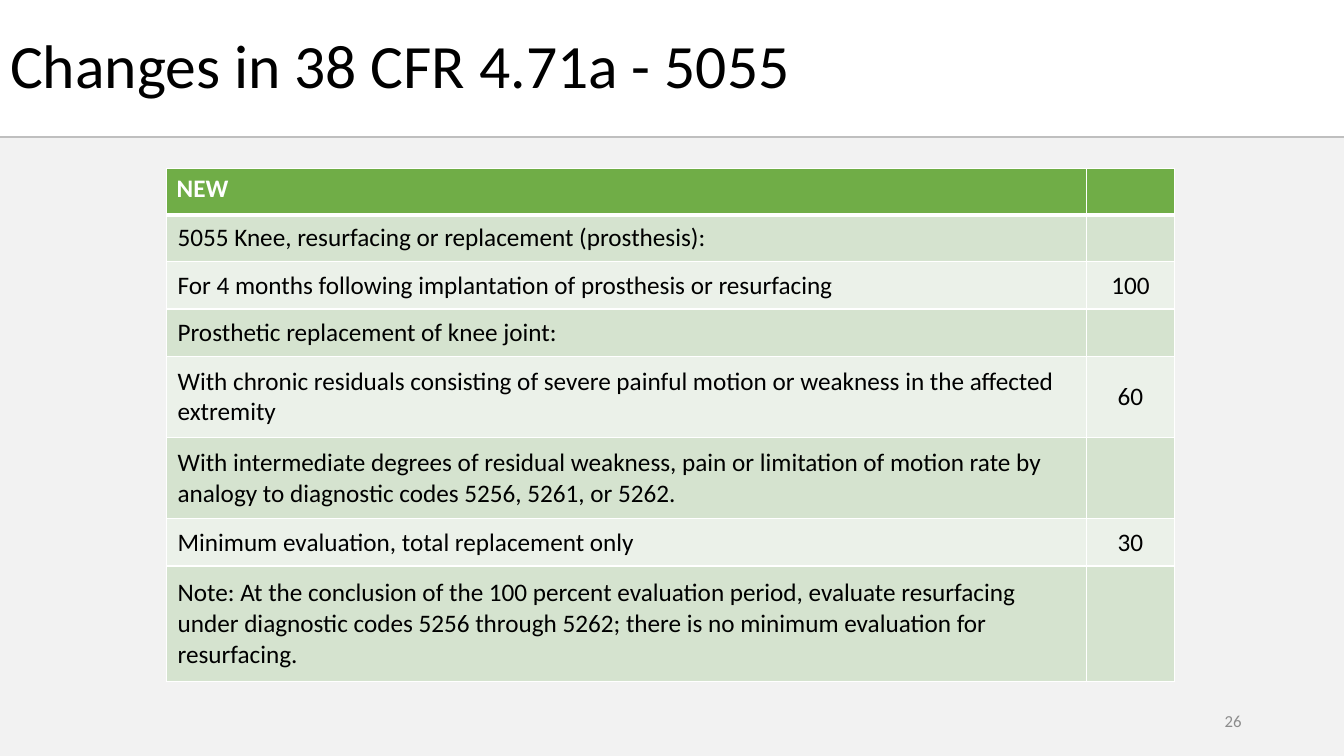
from lxml import etree
from pptx import Presentation
from pptx.dml.color import RGBColor
from pptx.enum.shapes import MSO_CONNECTOR, MSO_SHAPE
from pptx.enum.text import MSO_ANCHOR, PP_ALIGN
from pptx.oxml.ns import qn
from pptx.util import Pt

LEFT, CENTER, RIGHT = PP_ALIGN.LEFT, PP_ALIGN.CENTER, PP_ALIGN.RIGHT
TOP, MIDDLE = MSO_ANCHOR.TOP, MSO_ANCHOR.MIDDLE

BLACK = RGBColor(0x00, 0x00, 0x00)
WHITE = RGBColor(0xFF, 0xFF, 0xFF)
PANEL_GRAY = RGBColor(0xF2, 0xF2, 0xF2)
RULE_GRAY = RGBColor(0xBF, 0xBF, 0xBF)
NUMBER_GRAY = RGBColor(0x8C, 0x8C, 0x8C)
HEADER_GREEN = RGBColor(0x70, 0xAD, 0x47)
BAND_DARK = RGBColor(0xD5, 0xE3, 0xCF)
BAND_LIGHT = RGBColor(0xEB, 0xF1, 0xE9)

SLIDE_WIDTH, SLIDE_HEIGHT = 960, 540
RULE_TOP = 98

# Each row: criterion, rating, height in points
RATING_ROWS = [
    ("NEW", "", 33.1),
    ("5055 Knee, resurfacing or replacement (prosthesis):", "", 33.7),
    ("For 4 months following implantation of prosthesis or resurfacing", "100", 33.7),
    ("Prosthetic replacement of knee joint:", "", 33.7),
    ("With chronic residuals consisting of severe painful motion or weakness "
     "in the affected extremity", "60", 58.1),
    ("With intermediate degrees of residual weakness, pain or limitation of motion "
     "rate by analogy to diagnostic codes 5256, 5261, or 5262.", "", 58.1),
    ("Minimum evaluation, total replacement only", "30", 33.7),
    ("Note: At the conclusion of the 100 percent evaluation period, evaluate resurfacing "
     "under diagnostic codes 5256 through 5262; there is no minimum evaluation for "
     "resurfacing.", "", 82.5),
]
COLUMN_WIDTHS = [657, 63]


def write_text(frame, text, size, color, align=LEFT, bold=False):
    frame.text = text
    paragraph = frame.paragraphs[0]
    paragraph.alignment = align
    font = paragraph.font
    if paragraph.runs:
        font = paragraph.runs[0].font
    font.name = "Calibri"
    font.size = Pt(size)
    font.bold = bold
    font.color.rgb = color


def add_borders(cell, widths):
    properties = cell._tc.get_or_add_tcPr()
    for side, width in widths.items():
        border = etree.SubElement(properties, qn(f"a:ln{side}"), w=str(Pt(width)))
        fill = etree.SubElement(border, qn("a:solidFill"))
        etree.SubElement(fill, qn("a:srgbClr"), val=str(WHITE))


presentation = Presentation()
presentation.slide_width = Pt(SLIDE_WIDTH)
presentation.slide_height = Pt(SLIDE_HEIGHT)
slide = presentation.slides.add_slide(presentation.slide_layouts[5])
shapes = slide.shapes

# Gray panel and the rule above it
panel = shapes.add_shape(MSO_SHAPE.RECTANGLE, 0, Pt(RULE_TOP), Pt(SLIDE_WIDTH),
                         Pt(SLIDE_HEIGHT - RULE_TOP))
panel.shadow.inherit = False
panel.fill.solid()
panel.fill.fore_color.rgb = PANEL_GRAY
panel.line.fill.background()

rule = shapes.add_connector(MSO_CONNECTOR.STRAIGHT, 0, Pt(RULE_TOP),
                            Pt(SLIDE_WIDTH), Pt(RULE_TOP))
rule.line.color.rgb = RULE_GRAY
rule.line.width = Pt(1.5)
etree.SubElement(rule._element.spPr, qn("a:effectLst"))

# Title
title = shapes.title
title.left, title.top, title.width, title.height = Pt(0), Pt(10.8), Pt(636), Pt(77)
write_text(title.text_frame, "Changes in 38 CFR 4.71a - 5055", 44, BLACK)
title.text_frame.vertical_anchor = MIDDLE
title.text_frame.paragraphs[0].line_spacing = 0.9

# Rating table
table_height = sum(height for _, _, height in RATING_ROWS)
ratings = shapes.add_table(len(RATING_ROWS), len(COLUMN_WIDTHS), Pt(119), Pt(120.3),
                           Pt(sum(COLUMN_WIDTHS)), Pt(table_height)).table
for column, width in zip(ratings.columns, COLUMN_WIDTHS):
    column.width = Pt(width)

for r, (criterion, rating, height) in enumerate(RATING_ROWS):
    ratings.rows[r].height = Pt(height)
    header = r == 0
    band = HEADER_GREEN if header else BAND_DARK if r % 2 else BAND_LIGHT
    for c, text in enumerate((criterion, rating)):
        cell = ratings.cell(r, c)
        add_borders(cell, {"L": 1, "R": 1, "T": 3 if r == 1 else 1, "B": 3 if header else 1})
        cell.fill.solid()
        cell.fill.fore_color.rgb = band
        cell.vertical_anchor = TOP if header else MIDDLE
        if not header:
            cell.margin_left = cell.margin_right = Pt(7.9)
            cell.margin_top = cell.margin_bottom = Pt(4.3)
        write_text(cell.text_frame, text, 18, WHITE if header else BLACK,
                   CENTER if c else LEFT, header)

# Slide number
page_number = shapes.add_textbox(Pt(678), Pt(500.5), Pt(216), Pt(28.8)).text_frame
page_number.word_wrap = True
page_number.vertical_anchor = MIDDLE
write_text(page_number, "26", 12, NUMBER_GRAY, RIGHT)

presentation.save("out.pptx")
